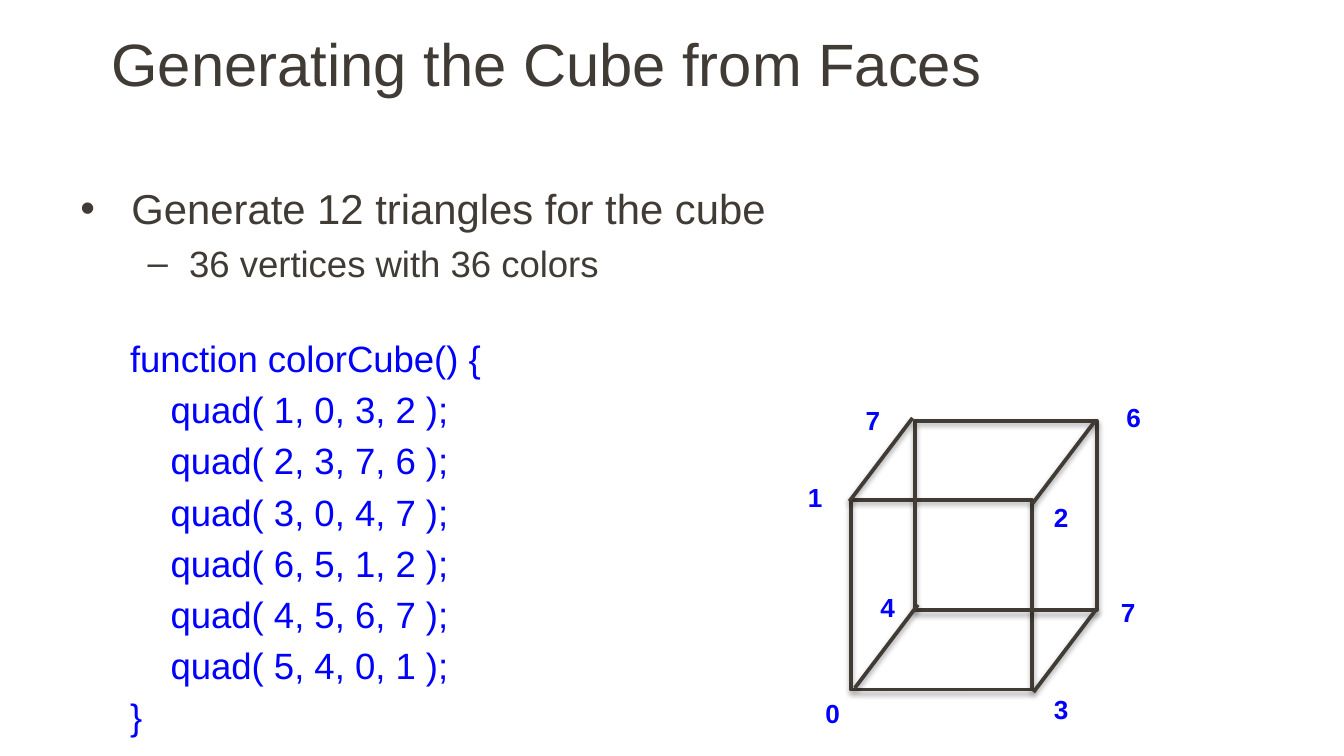
from lxml import etree
from pptx import Presentation
from pptx.dml.color import RGBColor
from pptx.enum import shapes, text
from pptx.oxml import ns
from pptx.util import Inches, Pt

INK = RGBColor(0x41, 0x3B, 0x36)
BLUE = RGBColor(0x00, 0x00, 0xFF)
FONT = "Arial"

CODE = [
    "function colorCube() {",
    "    quad( 1, 0, 3, 2 );",
    "    quad( 2, 3, 7, 6 );",
    "    quad( 3, 0, 4, 7 );",
    "    quad( 6, 5, 1, 2 );",
    "    quad( 4, 5, 6, 7 );",
    "    quad( 5, 4, 0, 1 );",
    "}",
]
FACE_WIDTH, FACE_HEIGHT = 1.35, 1.41
FACES = [(6.33, 3.72), (6.81, 3.13)]
EDGE_RUN, EDGE_RISE = 0.47, 0.62
EDGE_STARTS = [(6.32, 3.73), (6.36, 5.12), (7.68, 3.75), (7.69, 5.15)]
VERTEX_LABELS = [
    ("1", 5.9, 3.53), ("7", 6.33, 2.96), ("4", 6.44, 4.35), ("6", 8.27, 2.94),
    ("7", 8.23, 4.39), ("2", 7.73, 3.68), ("3", 7.73, 5.11), ("0", 6.03, 5.14),
]


def add_box(slide, left, top, width, height, wrap=True):
    box = slide.shapes.add_textbox(
        Inches(left), Inches(top), Inches(width), Inches(height))
    box.text_frame.word_wrap = wrap
    return box.text_frame


def add_span(para, words, size, color, bold=False):
    span = para.add_run()
    span.text = words
    span.font.name = FONT
    span.font.size = Pt(size)
    span.font.bold = bold
    span.font.color.rgb = color


def indent(para, margin, hanging=0, bullet=None):
    properties = para._p.get_or_add_pPr()
    properties.set("marL", str(Inches(margin)))
    properties.set("indent", str(Inches(-hanging)))
    if bullet:
        etree.SubElement(properties, ns.qn("a:buFont"), typeface=FONT)
        etree.SubElement(properties, ns.qn("a:buChar"), char=bullet)


def add_title(slide):
    frame = add_box(slide, 0.64, 0, 6.86, 0.93)
    frame.vertical_anchor = text.MSO_ANCHOR.MIDDLE
    para = frame.paragraphs[0]
    para.alignment = text.PP_ALIGN.CENTER
    add_span(para, "Generating the Cube from Faces", 32, INK)


def add_body(slide):
    frame = add_box(slide, 0.5, 1.31, 9, 3.71)
    para = frame.paragraphs[0]
    indent(para, 0.38, 0.38, "•")
    add_span(para, "Generate 12 triangles for the cube", 22.4, INK)

    para = frame.add_paragraph()
    para.level = 1
    indent(para, 0.81, 0.31, "–")
    para.space_before = Pt(4.4)
    add_span(para, "36 vertices with 36 colors", 19.6, INK)

    for number, line in enumerate(CODE):
        para = frame.add_paragraph()
        para.level = 1
        indent(para, 0.37)
        para.space_before = Pt(3.9 if number else 27.4)
        add_span(para, line, 19.6, BLUE)


def style_outline(shape, distance, opacity):
    shape.line.color.rgb = INK
    shape.line.width = Pt(2)
    effects = etree.SubElement(shape.element.spPr, ns.qn("a:effectLst"))
    shadow = etree.SubElement(
        effects, ns.qn("a:outerShdw"), blurRad=str(Pt(3.1)),
        dist=str(Pt(distance)), dir="5400000", rotWithShape="0")
    color = etree.SubElement(shadow, ns.qn("a:srgbClr"), val="000000")
    etree.SubElement(color, ns.qn("a:alpha"), val=str(opacity * 1000))


def add_face(slide, left, top):
    face = slide.shapes.add_shape(
        shapes.MSO_SHAPE.RECTANGLE, Inches(left), Inches(top),
        Inches(FACE_WIDTH), Inches(FACE_HEIGHT))
    face.fill.background()
    style_outline(face, 1.8, 35)


def add_edge(slide, left, bottom):
    edge = slide.shapes.add_connector(
        shapes.MSO_CONNECTOR.STRAIGHT, Inches(left), Inches(bottom),
        Inches(left + EDGE_RUN), Inches(bottom - EDGE_RISE))
    style_outline(edge, 1.6, 38)


def add_vertex_label(slide, name, left, top):
    frame = add_box(slide, left, top, 0.33, 0.34, wrap=False)
    para = frame.paragraphs[0]
    para.alignment = text.PP_ALIGN.CENTER
    add_span(para, name, 14, BLUE, bold=True)


def main():
    deck = Presentation()
    deck.slide_width = Inches(10)
    deck.slide_height = deck.slide_width * 9 // 16
    slide = deck.slides.add_slide(deck.slide_layouts[6])
    add_title(slide)
    add_body(slide)
    for corner in FACES:
        add_face(slide, *corner)
    for start in EDGE_STARTS:
        add_edge(slide, *start)
    for label in VERTEX_LABELS:
        add_vertex_label(slide, *label)
    deck.save("out.pptx")


if __name__ == "__main__":
    main()
